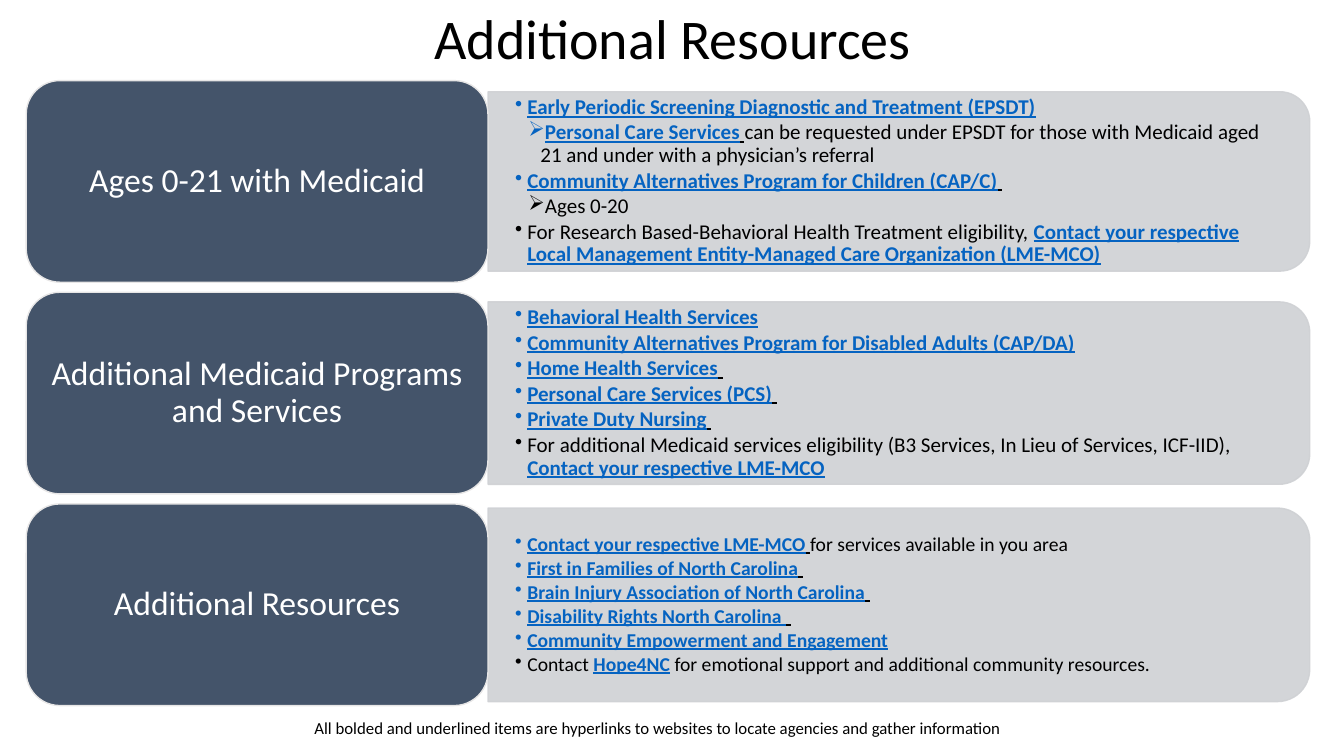
from lxml import etree
from pptx import Presentation
from pptx.dml.color import RGBColor
from pptx.enum.shapes import MSO_SHAPE as Shape
from pptx.enum.text import MSO_ANCHOR as Anchor, PP_ALIGN as Align
from pptx.oxml.ns import qn
from pptx.util import Inches, Pt

# Content: run styles, then (level, runs) for each paragraph
LINK = {"bold": True, "underline": True, "color": "0563C1"}
GAP = {"bold": True, "underline": True, "color": "000000"}
TEXT = {"bold": False, "underline": False, "color": "000000"}
SPACE = (" ", GAP)

TITLE = "Additional Resources"
NOTE = ("All bolded and underlined items are hyperlinks to websites "
        "to locate agencies and gather information")

AGES = [
    (1, [("Early Periodic Screening Diagnostic and Treatment (EPSDT)", LINK)]),
    (2, [("Personal Care Services", LINK), SPACE,
         ("can be requested under EPSDT for those with Medicaid aged 21 "
          "and under with a physician’s referral", TEXT)]),
    (1, [("Community Alternatives Program for Children (CAP/C)", LINK), SPACE]),
    (2, [("Ages 0-20", TEXT)]),
    (1, [("For Research Based-Behavioral Health Treatment eligibility, ", TEXT),
         ("Contact your respective Local Management Entity-Managed Care "
          "Organization (LME-MCO)", LINK)]),
]
PROGRAMS = [
    (1, [("Behavioral Health Services", LINK)]),
    (1, [("Community Alternatives Program for Disabled Adults (CAP/DA)", LINK)]),
    (1, [("Home Health Services", LINK), SPACE]),
    (1, [("Personal Care Services (PCS)", LINK), SPACE]),
    (1, [("Private Duty Nursing", LINK), SPACE]),
    (1, [("For additional Medicaid services eligibility (B3 Services, "
          "In Lieu of Services, ICF-IID), ", TEXT),
         ("Contact your respective LME-MCO", LINK)]),
]
OTHERS = [
    (1, [("Contact your respective LME-MCO", LINK), SPACE,
         ("for services available in you area", TEXT)]),
    (1, [("First in Families of North Carolina", LINK), SPACE]),
    (1, [("Brain Injury Association of North Carolina", LINK), SPACE]),
    (1, [("Disability Rights North Carolina ", LINK), SPACE]),
    (1, [("Community Empowerment and Engagement", LINK)]),
    (1, [("Contact ", TEXT), ("Hope4NC", LINK),
         (" for emotional support and additional community resources.", TEXT)]),
]
# Label, panel height, text size, paragraphs
ROWS = [
    ("Ages 0-21 with Medicaid", 1.78, 15, AGES),
    ("Additional Medicaid Programs and Services", 1.81, 15, PROGRAMS),
    ("Additional Resources", 1.92, 14, OTHERS),
]
# Bullet and left margin by level
MARKS = {1: ("•", 0.12), 2: ("➢", 0.25)}
HANG = 0.12

# Layout in inches
LEFT, TOP, PITCH = 0.26, 0.8, 2.1
LABEL_W, LABEL_H = 4.58, 2
PANEL_X, PANEL_W = LEFT + LABEL_W, 8.15
BODY_W = 8.06

deck = Presentation()
deck.slide_width, deck.slide_height = Inches(13.33), Inches(7.5)
slide = deck.slides.add_slide(deck.slide_layouts[6])


def paint(target, color):
    target.rgb = RGBColor.from_string(color)


def fade(fill):
    for node in fill.iter(qn("a:srgbClr")):
        etree.SubElement(node, qn("a:alpha"), val="90000")


def add_run(para, text, size, style):
    run = para.add_run()
    run.text = text
    look = {"name": "Calibri", "size": Pt(size), **style}
    paint(run.font.color, look.pop("color"))
    for key, value in look.items():
        setattr(run.font, key, value)


def add_form(kind, x, y, w, h, fill, line):
    form = slide.shapes.add_shape(kind, *map(Inches, (x, y, w, h)))
    form.shadow.inherit = False
    form.fill.solid()
    paint(form.fill.fore_color, fill)
    paint(form.line.color, line)
    form.line.width = Pt(1)
    return form


def add_box(x, y, w, h):
    box = slide.shapes.add_textbox(*map(Inches, (x, y, w, h)))
    box.text_frame.word_wrap = True
    return box.text_frame


def add_panel(mid, high):
    # The shape stands upright before its quarter turn
    x = PANEL_X + (PANEL_W - high) / 2
    panel = add_form(Shape.ROUND_2_SAME_RECTANGLE, x, mid - PANEL_W / 2,
                     high, PANEL_W, "CFD1D4", "CFD1D4")
    panel.rotation = 90
    fade(panel.fill._xPr)


def add_body(mid, high, size, paras):
    frame = add_box(PANEL_X, mid - high / 2, BODY_W, high)
    look = {"margin_left": 0.27, "margin_right": 0.27,
            "margin_top": 0.14, "margin_bottom": 0.14}
    for key, value in look.items():
        setattr(frame, key, Inches(value))
    frame.vertical_anchor = Anchor.MIDDLE
    for i, (level, runs) in enumerate(paras):
        para = frame.add_paragraph() if i else frame.paragraphs[0]
        mark, margin = MARKS[level]
        props = para._p.get_or_add_pPr()
        props.set("marL", str(Inches(margin)))
        props.set("indent", str(-Inches(HANG)))
        etree.SubElement(props, qn("a:buChar"), char=mark)
        para.level = level
        para.line_spacing = 0.9
        para.space_after = Pt(2)
        for text, style in runs:
            add_run(para, text, size, style)


def add_label(y, text):
    label = add_form(Shape.ROUNDED_RECTANGLE, LEFT, y, LABEL_W, LABEL_H,
                     "44546A", "E7E6E6")
    label.text_frame.vertical_anchor = Anchor.MIDDLE
    add_line(label.text_frame, text, 24, "FFFFFF")


def add_line(frame, text, size, color, align=Align.CENTER, space=0.9):
    para = frame.paragraphs[0]
    para.alignment = align
    para.line_spacing = space
    add_run(para, text, size, {"color": color})


# Rows: panel, its list, then the label on top
for i, (name, high, size, paras) in enumerate(ROWS):
    y = TOP + i * PITCH
    mid = y + LABEL_H / 2
    add_panel(mid, high)
    add_body(mid, high - 0.18, size, paras)
    add_label(y, name)

# Title and footnote
add_line(add_box(0.92, 0.06, 11.5, 0.61), TITLE, 40, "000000")
add_line(add_box(3.02, 7.07, 7.09, 0.3), NOTE, 12, "000000", Align.LEFT, 1.0)

deck.save("out.pptx")
